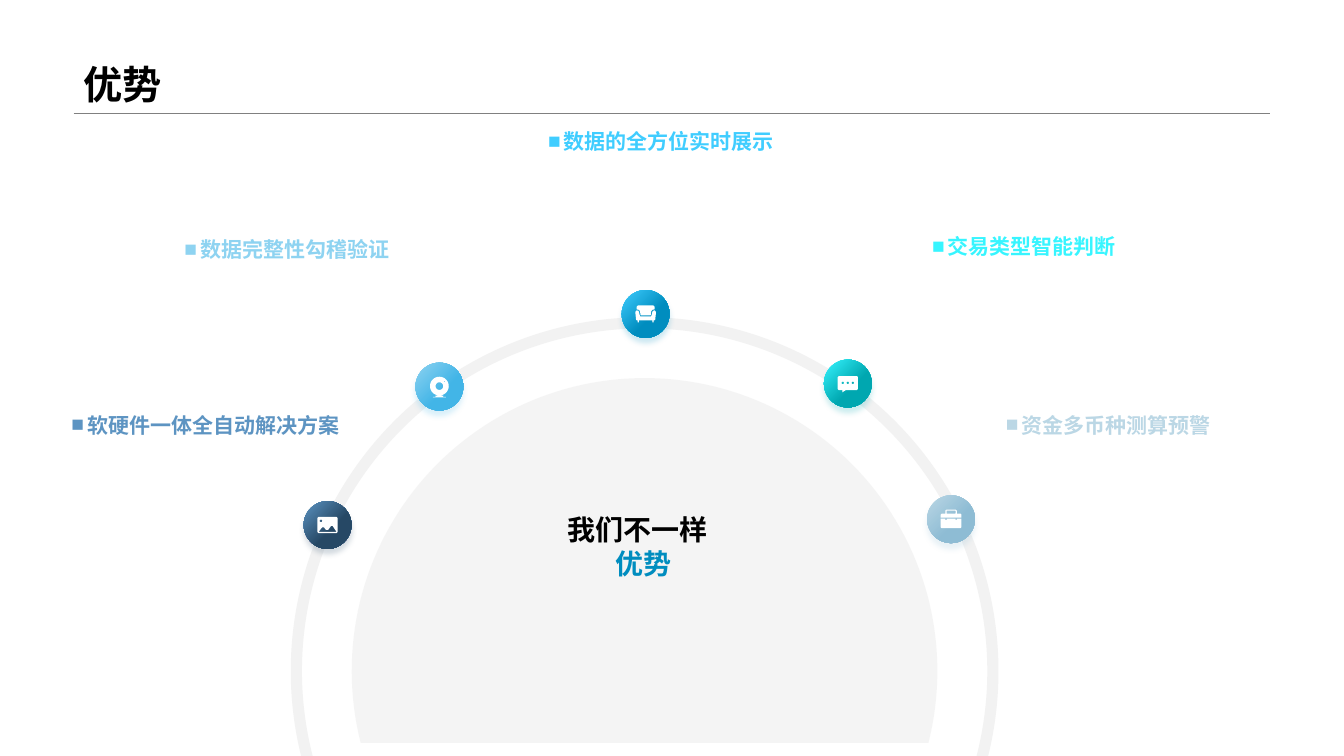
import math

from lxml import etree
from pptx import Presentation
from pptx.dml.color import RGBColor
from pptx.enum.shapes import MSO_CONNECTOR, MSO_SHAPE
from pptx.enum.text import MSO_ANCHOR, PP_ALIGN
from pptx.oxml.ns import qn
from pptx.util import Emu, Pt

STRAIGHT = MSO_CONNECTOR.STRAIGHT
ARC, OVAL = MSO_SHAPE.ARC, MSO_SHAPE.OVAL
TOP, BOTTOM = MSO_ANCHOR.TOP, MSO_ANCHOR.BOTTOM
LEFT, CENTER = PP_ALIGN.LEFT, PP_ALIGN.CENTER

COLUMNS, ROWS, CELL = 128, 72, 95250
FONT = "Arial"
COLORS = {
    "ink": "000000", "rule": "808080", "pale": "F2F2F2", "icon": "FFFFFF",
    "accent": "008DBF",
}
GRADIENTS = {
    "navy": ("5D94C2", "264865"),
    "sky": ("8ED3F1", "42B5E7"),
    "blue": ("40CDFF", "008DBF"),
    "teal": ("37F5FF", "00A7B0"),
    "mist": ("BBD7E5", "8EBCD4"),
}
HUB = (61.39, 63.9)
RING_RADIUS, DOME_RADIUS, DOME_BASE = 33.17, 27.89, 70.75
NODE_SIZE, ICON_STEP = 4.55, 0.096
LABEL_HEIGHT = 3.55


def grid(cells):
    return Emu(round(cells * CELL))


def add_xml(parent, tag, **attributes):
    child = etree.SubElement(parent, qn(tag))
    for key, value in attributes.items():
        child.set(key, str(value))
    return child


def paint_solid(fill, color):
    fill.solid()
    fill.fore_color.rgb = RGBColor.from_string(color)


def paint_gradient(fill, colors):
    fill.gradient()
    fill.gradient_angle = 315
    for stop, color, position in zip(fill.gradient_stops, colors, (0, 0.6)):
        stop.color.rgb = RGBColor.from_string(color)
        stop.position = position


def disc(x, y, radius, steps=32):
    turns = [2 * math.pi * step / steps for step in range(steps)]
    return [(x + radius * math.cos(t), y + radius * math.sin(t)) for t in turns]


def panel(left, top, right, bottom, cut=1):
    return [(left + cut, top), (right - cut, top), (right, top + cut),
            (right, bottom - cut), (right - cut, bottom), (left + cut, bottom),
            (left, bottom - cut), (left, top + cut)]


def mirrored(half):
    return half + [(-x, y) for x, y in reversed(half)]


ICONS = {
    "photo": [
        panel(-10, -8, 10, 8),
        [(-9, 7), (-5.5, 2.5), (-3.5, 2.5), (-1.5, 5), (0.5, 5),
         (3.5, 1), (5, 1), (9, 7)],
        disc(-6.5, -4, 1.3),
    ],
    "webcam": [
        disc(0, -0.5, 9.3),
        disc(0, -0.5, 3.8),
        disc(5, -5, 0.5),
        mirrored([(-4, 9), (-3.5, 10.2), (-6.5, 10.2), (-6.5, 10.8)]),
    ],
    "sofa": [
        mirrored([(-7.5, -8.5), (-9, -7), (-9, -4.5), (-6.5, -4), (-5.5, -2.5),
                  (-5, 1.5)]),
        mirrored([(-9, -3.5), (-10.3, -2), (-9.5, 6), (-8, 6.5), (-8, 8.5),
                  (-6.7, 8.5), (-6.7, 6.5)][::-1]
                 + [(-10.3, -2), (-9, -3.5), (-7, -3), (-5.5, 2.5)]),
    ],
    "chat": [
        [(-9, -7.5), (9, -7.5), (10, -6.5), (10, 5.5), (9, 6.5), (-2, 6.5),
         (-5.5, 8.7), (-5.5, 6.5), (-9, 6.5), (-10, 5.5), (-10, -6.5)],
        *[disc(x, -0.7, 1.2) for x in (-5, 0, 5)],
    ],
    "briefcase": [
        mirrored([(-4.5, -9.5), (-5.7, -8.5), (-5.7, -5.5), (-9.3, -5.5),
                  (-10.3, -4.5), (-10.3, -1.5)]),
        panel(-4.5, -8.4, 4.5, -5.5, 0.3),
        mirrored([(-5.5, -0.6), (-10.3, -0.6), (-10.3, 8), (-9.3, 9)][::-1]
                 + [(-5.5, -0.6), (-5.5, 1), (-4.5, 1), (-4.5, -0.6)]),
    ],
}

ADVANTAGES = [
    ("软硬件一体全自动解决方案", "navy", "photo", (31.2, 50), (5.86, 38.78, 28.61)),
    ("数据完整性勾稽验证", "sky", "webcam", (41.85, 36.82), (16.61, 22.08, 25.82)),
    ("数据的全方位实时展示", "blue", "sofa", (61.49, 29.9), (51.26, 11.81, 25.82)),
    ("交易类型智能判断", "teal", "chat", (80.75, 36.53), (87.84, 21.79, 22.08)),
    ("资金多币种测算预警", "mist", "briefcase", (90.58, 49.45), (94.85, 38.78, 23.23)),
]


def add_text(slide, box, anchor=TOP):
    frame = slide.shapes.add_textbox(*map(grid, box)).text_frame
    frame.word_wrap = True
    frame.vertical_anchor = anchor
    return frame


def style_paragraph(paragraph, text, size, align=LEFT):
    paragraph.text = text
    paragraph.alignment = align
    font = paragraph.font
    font.name, font.size, font.bold = FONT, Pt(size), True
    return font.fill


def add_outline(slide, contours, color):
    first, *others = [[(grid(x), grid(y)) for x, y in points]
                      for points in contours]
    builder = slide.shapes.build_freeform(*first[0], scale=1.0)
    builder.add_line_segments(first[1:], close=True)
    for points in others:
        builder.move_to(*points[0])
        builder.add_line_segments(points[1:], close=True)
    outline = builder.convert_to_shape()
    outline.shadow.inherit = False
    outline.line.fill.background()
    paint_solid(outline.fill, color)
    return outline


def add_circle(slide, preset, center, radius):
    x, y = center
    circle = slide.shapes.add_shape(
        preset, *map(grid, (x - radius, y - radius, 2 * radius, 2 * radius)))
    circle.shadow.inherit = False
    return circle


def add_title(slide):
    rule = slide.shapes.add_connector(
        STRAIGHT, *map(grid, (7.01, 10.8, 120.96, 10.8)))
    rule.line.width = Pt(0.25)
    rule.line.color.rgb = RGBColor.from_string(COLORS["rule"])
    add_xml(rule._element.spPr, "a:effectLst")
    title = add_text(slide, (7.01, 0, 113.95, 10.75), BOTTOM).paragraphs[0]
    title.line_spacing = 0.9
    paint_solid(style_paragraph(title, "优势", 28), COLORS["ink"])


def add_dome(slide):
    x, y = HUB
    dip = math.asin((DOME_BASE - y) / DOME_RADIUS)
    sweep = math.pi + 2 * dip
    angles = [math.pi - dip + sweep * step / 120 for step in range(121)]
    points = [(x + DOME_RADIUS * math.cos(a), y + DOME_RADIUS * math.sin(a))
              for a in angles]
    dome = add_outline(slide, [points], COLORS["pale"])
    color = dome._element.spPr.find(qn("a:solidFill"))[0]
    add_xml(color, "a:alpha", val=80000)


def add_ring(slide):
    ring = add_circle(slide, ARC, HUB, RING_RADIUS)
    ring.rotation = 231.5
    ring.adjustments[0], ring.adjustments[1] = 162, 121.12
    ring.fill.background()
    ring.line.width = Pt(8)
    ring.line.color.rgb = RGBColor.from_string(COLORS["pale"])


def add_hub_text(slide):
    frame = add_text(slide, (50.57, 48.38, 20.35, 7.78))
    slogan, topic = frame.paragraphs[0], frame.add_paragraph()
    paint_solid(style_paragraph(slogan, "我们不一样", 20, CENTER), COLORS["ink"])
    topic._p.get_or_add_pPr().set("marL", str(grid(1.15)))
    paint_solid(style_paragraph(topic, "优势", 20, CENTER), COLORS["accent"])


def add_label(slide, text, colors, box):
    label = add_text(slide, (*box, LABEL_HEIGHT)).paragraphs[0]
    properties = label._p.get_or_add_pPr()
    properties.set("marL", str(grid(1.5)))
    properties.set("indent", str(grid(-1.5)))
    add_xml(add_xml(properties, "a:buClr"), "a:srgbClr", val=colors[0])
    add_xml(properties, "a:buFont", typeface=FONT)
    add_xml(properties, "a:buChar", char="■")
    paint_gradient(style_paragraph(label, text, 15), colors)


def add_node(slide, colors, icon, center):
    node = add_circle(slide, OVAL, center, NODE_SIZE / 2)
    paint_gradient(node.fill, colors)
    node.line.fill.background()
    effects = node._element.spPr.find(qn("a:effectLst"))
    shadow = add_xml(effects, "a:outerShdw", blurRad=Pt(4), dist=Pt(4),
                     dir=5400000, algn="t", rotWithShape=0)
    add_xml(add_xml(shadow, "a:srgbClr", val=colors[1]), "a:alpha", val=20000)
    x, y = center
    contours = [[(x + dx * ICON_STEP, y + dy * ICON_STEP) for dx, dy in points]
                for points in ICONS[icon]]
    add_outline(slide, contours, COLORS["icon"])


def main():
    deck = Presentation()
    deck.slide_width, deck.slide_height = grid(COLUMNS), grid(ROWS)
    slide = deck.slides.add_slide(deck.slide_layouts[6])
    add_title(slide)
    add_dome(slide)
    add_ring(slide)
    add_hub_text(slide)
    for text, tone, icon, center, box in ADVANTAGES:
        add_label(slide, text, GRADIENTS[tone], box)
        add_node(slide, GRADIENTS[tone], icon, center)
    deck.save("out.pptx")


if __name__ == "__main__":
    main()
